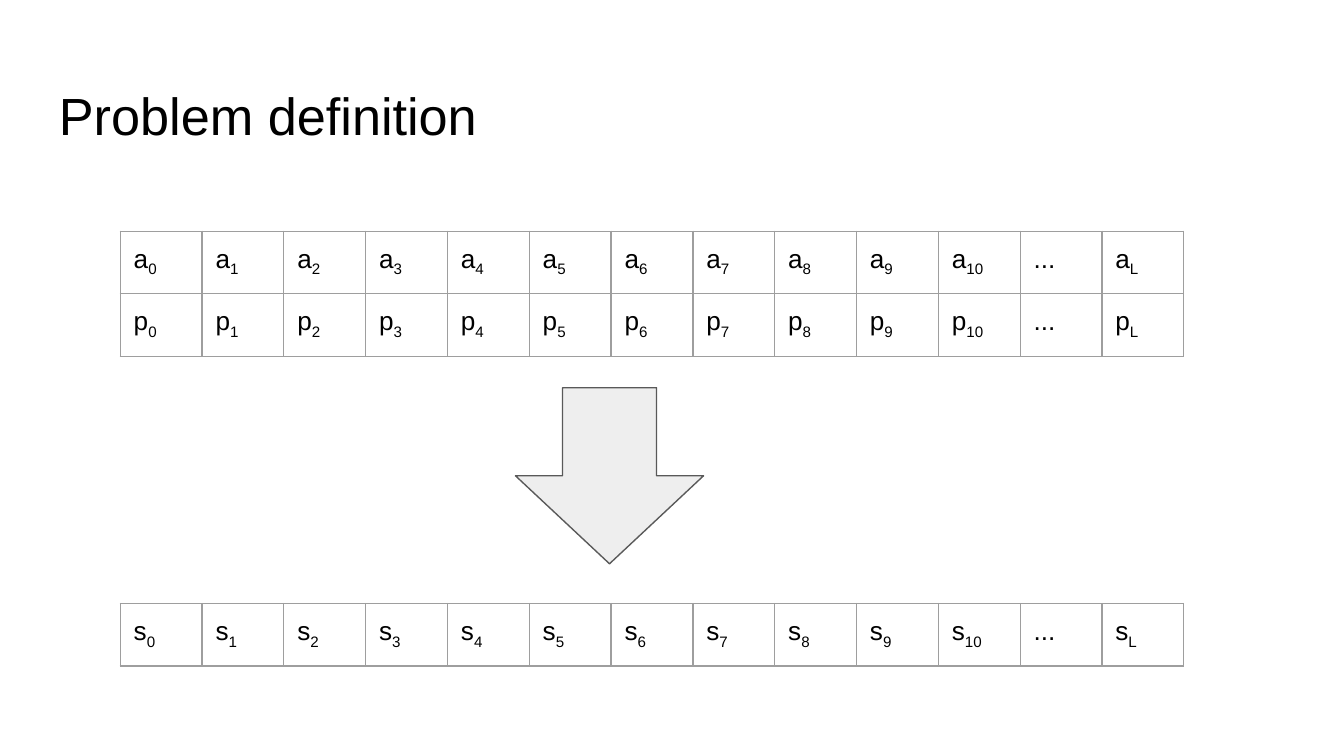
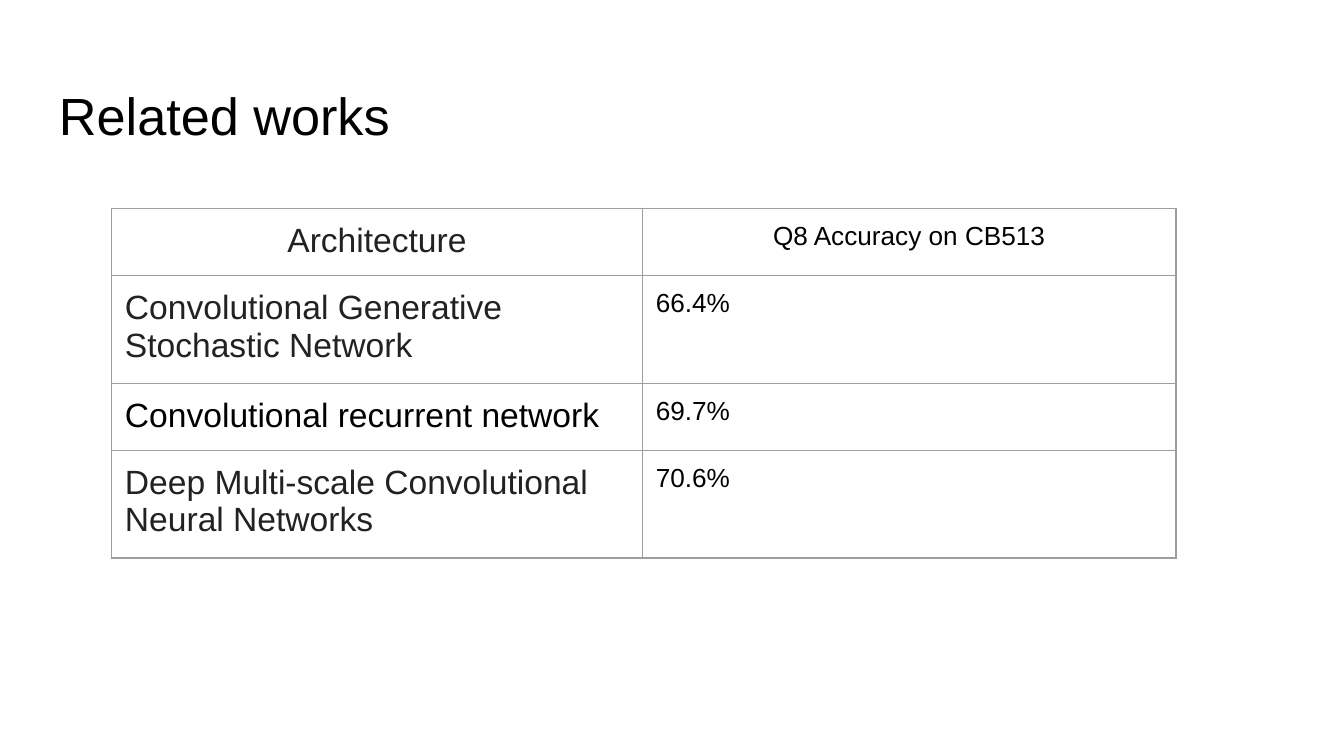
from lxml.etree import SubElement as Sub
from pptx import Presentation
from pptx.dml.color import RGBColor as RGB
from pptx.enum.shapes import MSO_SHAPE as Shape
from pptx.enum.text import PP_ALIGN as Align
from pptx.oxml.ns import qn
from pptx.util import Inches, Pt

WIDE, HIGH = Inches(10), Inches(5.625)
UNIT = WIDE / 100  # square grid, 100 columns across the slide
FONT = "Arial"
BLACK = RGB(0x00, 0x00, 0x00)
INK = RGB(0x22, 0x22, 0x22)
RULE = RGB(0x9E, 0x9E, 0x9E)
PALE = RGB(0xEE, 0xEE, 0xEE)
EDGE = RGB(0x59, 0x59, 0x59)
THIN = Pt(0.75)


def span(*units):
    return [round(n * UNIT) for n in units]


def style(par, size, color=BLACK):
    for run in par.runs:
        font = run.font
        font.name, font.size, font.color.rgb = FONT, Pt(size), color


def add_page(deck, title):
    page = deck.slides.add_slide(deck.slide_layouts[6])
    frame = page.shapes.add_textbox(*span(3.4, 4.9, 93.2, 6.3)).text_frame
    frame.word_wrap = True
    frame.margin_left = frame.margin_right = frame.margin_bottom = Inches(0.1)
    frame.margin_top = Inches(0.13)
    frame.text = title
    style(frame.paragraphs[0], 28)
    return page


def frame_cell(cell):
    """Clear the fill, rule all four sides and set even margins."""
    props = cell._tc.get_or_add_tcPr()
    for side in "LRTB":
        line = Sub(props, qn(f"a:ln{side}"), w=str(THIN))
        Sub(Sub(line, qn("a:solidFill")), qn("a:srgbClr"), val=str(RULE))
    cell.fill.background()
    cell.margin_left = cell.margin_right = Inches(0.1)
    cell.margin_top = cell.margin_bottom = Inches(0.1)


def add_grid(page, left, top, cols, rows):
    """Add a plain ruled table from column widths and row heights."""
    place = span(left, top, sum(cols), sum(rows))
    table = page.shapes.add_table(len(rows), len(cols), *place).table
    table.first_row = table.horz_banding = False
    for col, width in zip(table.columns, span(*cols)):
        col.width = width
    for row, height in zip(table.rows, span(*rows)):
        row.height = height
    for cell in table.iter_cells():
        frame_cell(cell)
    return table


def add_series(page, top, names):
    """Add one row per name, indexed from 0 to 10 and on to L."""
    marks = [*map(str, range(11)), "...", "L"]
    table = add_grid(page, 8.95, top, [6.09] * len(marks), [4.5] * len(names))
    for r, name in enumerate(names):
        for c, mark in enumerate(marks):
            par = table.cell(r, c).text_frame.paragraphs[0]
            if mark == "...":
                par.text = mark
            else:
                par.text = name
                sub = par.add_run()
                sub.text = mark
                sub._r.get_or_add_rPr().set("baseline", "-25000")
            style(par, 14)


def add_arrow(page):
    arrow = page.shapes.add_shape(Shape.RIGHT_ARROW, *span(38.8, 28.4, 13.1, 14))
    arrow.rotation = 90
    arrow.shadow.inherit = False
    arrow.fill.solid()
    arrow.fill.fore_color.rgb = PALE
    arrow.line.color.rgb = EDGE
    arrow.line.width = THIN


def add_scores(page):
    scores = [
        ("Architecture", "Q8 Accuracy on CB513", INK),
        ("Convolutional Generative Stochastic Network", "66.4%", INK),
        ("Convolutional recurrent network", "69.7%", BLACK),
        ("Deep Multi-scale Convolutional Neural Networks", "70.6%", INK),
    ]
    table = add_grid(page, 8.3, 15.5, [39.5, 39.7], [4.8, 7.6] * 2)
    for r, (model, score, color) in enumerate(scores):
        looks = [(model, 18, color), (score, 14, BLACK)]
        for c, (text, size, tint) in enumerate(looks):
            par = table.cell(r, c).text_frame.paragraphs[0]
            par.text = text
            par.alignment = Align.LEFT if r else Align.CENTER
            style(par, size, tint)


def main():
    deck = Presentation()
    deck.slide_width, deck.slide_height = WIDE, HIGH

    # Inputs above, outputs below
    page = add_page(deck, "Problem definition")
    add_series(page, 17.2, "ap")
    add_series(page, 44.9, "s")
    add_arrow(page)

    # Published results
    add_scores(add_page(deck, "Related works"))

    deck.save("out.pptx")


if __name__ == "__main__":
    main()
